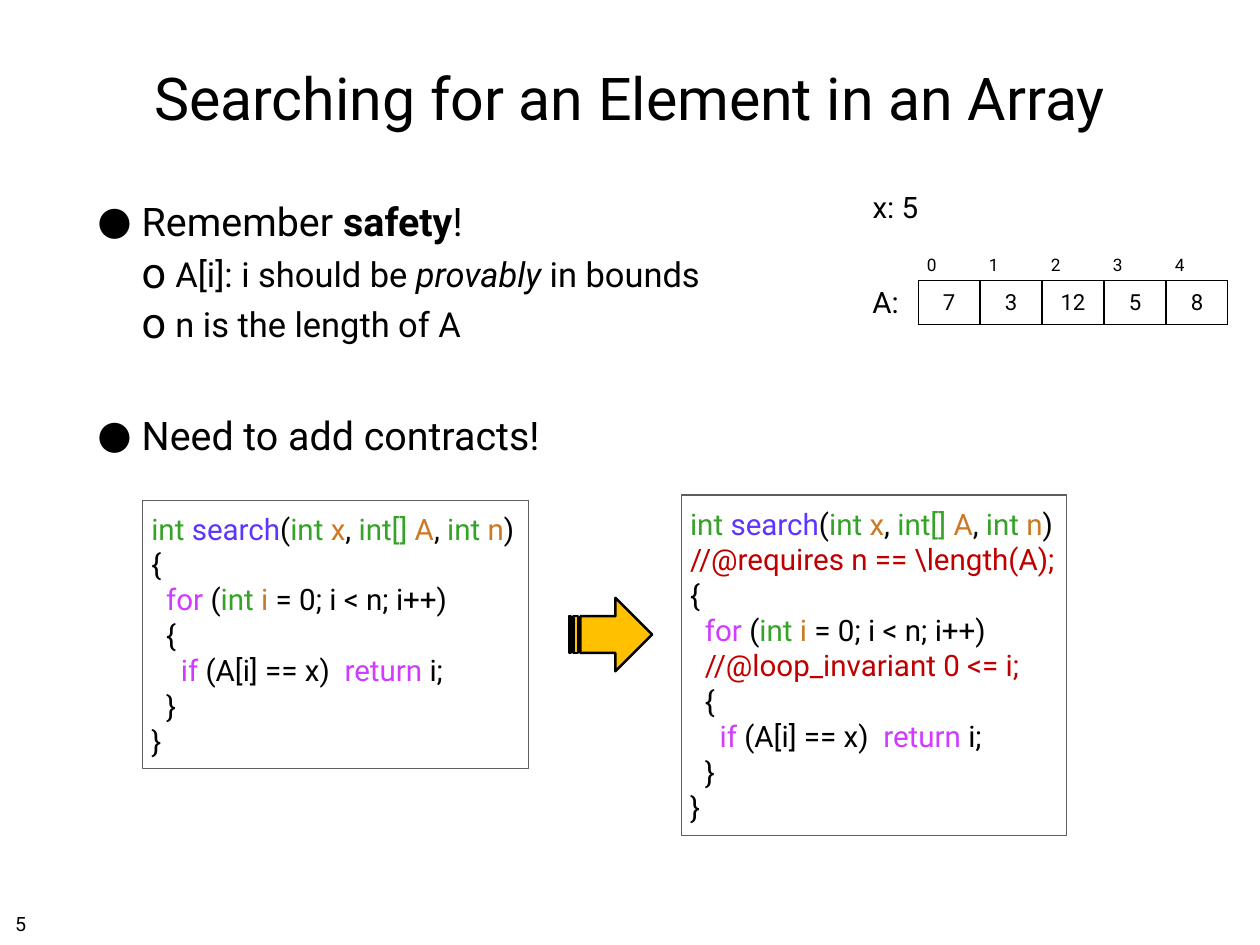
import lxml.etree
import pptx
import pptx.dml.color
import pptx.enum.shapes
import pptx.enum.text
import pptx.oxml.ns
import pptx.util

SLIDE_WIDTH = pptx.util.Inches(14.22)
SLIDE_HEIGHT = pptx.util.Inches(10.67)
FONT = "Roboto"
COLOURS = {
    "text": "000000",
    "type": "34A327",
    "function": "5E34FF",
    "variable": "CD7923",
    "keyword": "D03BFF",
    "contract": "C00000",
    "frame": "5E5E5E",
    "arrow": "FFC000",
}
ALIGN = pptx.enum.text.PP_ALIGN
ANCHOR = pptx.enum.text.MSO_ANCHOR
SHAPE = pptx.enum.shapes.MSO_SHAPE
INDENT = pptx.util.Pt(12)

ARRAY = [7, 3, 12, 5, 8]

# Each line of code is its depth of nesting and its (text, role) pieces.
SIGNATURE = (0, [
    ("int ", "type"), ("search", "function"), ("(", "text"),
    ("int ", "type"), ("x", "variable"), (", ", "text"),
    ("int[] ", "type"), ("A", "variable"), (", ", "text"),
    ("int ", "type"), ("n", "variable"), (")", "text"),
])
REQUIRES = (0, [("//@requires n == \\length(A);", "contract")])
LOOP = (1, [("for", "keyword"), (" (", "text"), ("int ", "type"),
            ("i", "variable"), (" = 0; i < n; i++)", "text")])
INVARIANT = (1, [("//@loop_invariant 0 <= i;", "contract")])
LOOP_BODY = [
    (1, [("{", "text")]),
    (2, [("if", "keyword"), (" (A[i] == x)  ", "text"),
         ("return ", "keyword"), ("i;", "text")]),
    (1, [("}", "text")]),
]
OPEN, CLOSE = (0, [("{", "text")]), (0, [("}", "text")])
PLAIN_CODE = [SIGNATURE, OPEN, LOOP, *LOOP_BODY, CLOSE]
SAFE_CODE = [SIGNATURE, REQUIRES, OPEN, LOOP, INVARIANT, *LOOP_BODY, CLOSE]


def area(left, top, width, height):
    """Turn percentages of the slide's size into lengths."""
    return [
        pptx.util.Emu(int(share * side / 100))
        for share, side in zip((left, top, width, height),
                               (SLIDE_WIDTH, SLIDE_HEIGHT) * 2)
    ]


def colour(role):
    return pptx.dml.color.RGBColor.from_string(COLOURS[role])


def xml_child(parent, tag, **attributes):
    child = lxml.etree.SubElement(parent, pptx.oxml.ns.qn(tag))
    for key, value in attributes.items():
        child.set(key, str(value))
    return child


def write(paragraph, text, size=24, role="text", bold=False, italic=False):
    run = paragraph.add_run()
    run.text = text
    font = run.font
    font.name, font.size = FONT, pptx.util.Pt(size)
    font.bold, font.italic = bold, italic
    font.color.rgb = colour(role)


def set_frame(frame, inset=0.06, anchor=ANCHOR.TOP, wrap=False):
    frame.auto_size = pptx.enum.text.MSO_AUTO_SIZE.NONE
    frame.word_wrap = wrap
    frame.vertical_anchor = anchor
    frame.margin_left = frame.margin_right = pptx.util.Inches(inset)
    frame.margin_top = frame.margin_bottom = pptx.util.Inches(inset)


def paragraphs(frame, count):
    """Return the frame's first paragraph and enough new ones after it."""
    return [frame.paragraphs[0]] + [frame.add_paragraph() for _ in range(count - 1)]


def place(placeholder, share):
    placeholder.left, placeholder.top, placeholder.width, placeholder.height = area(*share)


def add_bullet(paragraph, level, space):
    margin, hanging, percent, mark = [(0.5, 0.5, 100, "●"), (0.88, 0.38, 125, "o")][level]
    paragraph.level = level
    paragraph.alignment = ALIGN.LEFT
    paragraph.space_before = pptx.util.Pt(space)
    properties = paragraph._p.get_or_add_pPr()
    properties.set("marL", str(pptx.util.Inches(margin)))
    properties.set("indent", str(-pptx.util.Inches(hanging)))
    xml_child(xml_child(properties, "a:buClr"), "a:srgbClr", val=COLOURS["text"])
    xml_child(properties, "a:buSzPct", val=percent * 1000)
    xml_child(properties, "a:buFont", typeface=FONT)
    xml_child(properties, "a:buChar", char=mark)


def fill_title(title):
    place(title, (7.31, 2.62, 85.37, 15.37))
    set_frame(title.text_frame, anchor=ANCHOR.MIDDLE, wrap=True)
    paragraph = title.text_frame.paragraphs[0]
    paragraph.alignment = ALIGN.CENTER
    write(paragraph, "Searching for an Element in an Array", size=48)


def fill_body(body):
    plain, bold, italic = {}, {"bold": True}, {"italic": True}
    points = [
        (0, 8, [("Remember ", plain), ("safety", bold), ("!", plain)]),
        (1, 7, [("A[i]: i should be ", plain), ("provably", italic), (" in bounds", plain)]),
        (1, 7, [("n is the length of A", plain)]),
        (0, 54, [("Need to add contracts!", plain)]),
    ]
    place(body, (7.31, 20.34, 57.31, 74.98))
    set_frame(body.text_frame, wrap=True)
    for paragraph, (level, space, pieces) in zip(paragraphs(body.text_frame, len(points)), points):
        add_bullet(paragraph, level, space)
        for text, style in pieces:
            write(paragraph, text, size=(32, 28)[level], **style)


def add_label(slide, text, share, size=24, align=ALIGN.CENTER, anchor=ANCHOR.MIDDLE):
    frame = slide.shapes.add_textbox(*area(*share)).text_frame
    set_frame(frame, anchor=anchor)
    frame.paragraphs[0].alignment = align
    write(frame.paragraphs[0], text, size=size)


def add_borders(cell):
    properties = cell._tc.get_or_add_tcPr()
    for side in "LRTB":
        line = xml_child(properties, f"a:ln{side}", w=pptx.util.Pt(1))
        xml_child(xml_child(line, "a:solidFill"), "a:srgbClr", val=COLOURS["text"])


def add_array(slide, values, share):
    """Draw the values as a row of boxes with their indices above."""
    table = slide.shapes.add_table(2, len(values), *area(*share)).table
    table.first_row = table.horz_banding = False
    for column, value in enumerate(values):
        index_cell, value_cell = table.cell(0, column), table.cell(1, column)
        add_borders(value_cell)
        for cell, number, size, align, anchor in (
            (index_cell, column, 14, ALIGN.LEFT, ANCHOR.BOTTOM),
            (value_cell, value, 18, ALIGN.CENTER, ANCHOR.MIDDLE),
        ):
            cell.fill.background()
            cell.vertical_anchor = anchor
            paragraph = cell.text_frame.paragraphs[0]
            paragraph.alignment = align
            write(paragraph, str(number), size=size)


def add_outlined(slide, kind, share, line, weight):
    shape = slide.shapes.add_shape(kind, *area(*share))
    shape.shadow.inherit = False
    shape.fill.background()
    shape.line.color.rgb = colour(line)
    shape.line.width = pptx.util.Pt(weight)
    return shape


def add_code(slide, lines, share):
    frame = add_outlined(slide, SHAPE.RECTANGLE, share, "frame", 1).text_frame
    set_frame(frame, inset=0.1, anchor=ANCHOR.MIDDLE)
    for paragraph, (depth, pieces) in zip(paragraphs(frame, len(lines)), lines):
        paragraph.alignment = ALIGN.LEFT
        paragraph._p.get_or_add_pPr().set("marL", str(depth * INDENT))
        for text, role in pieces:
            write(paragraph, text, role=role)


def main():
    deck = pptx.Presentation()
    deck.slide_width, deck.slide_height = SLIDE_WIDTH, SLIDE_HEIGHT
    slide = deck.slides.add_slide(deck.slide_layouts[1])
    fill_title(slide.shapes.title)
    fill_body(slide.placeholders[1])
    add_label(slide, "x: 5", (68.78, 19.49, 4.57, 4.87))
    add_label(slide, "A:", (68.78, 29.52, 3.02, 4.87))
    add_array(slide, ARRAY, (72.86, 25.02, 24.61, 9.37))
    add_code(slide, PLAIN_CODE, (11.32, 52.95, 30.6, 28.4))
    arrow = add_outlined(slide, SHAPE.STRIPED_RIGHT_ARROW, (45.15, 63.26, 6.61, 7.78), "text", 2)
    arrow.fill.solid()
    arrow.fill.fore_color.rgb = colour("arrow")
    add_code(slide, SAFE_CODE, (54.08, 52.39, 30.6, 35.99))
    add_label(slide, "5", (0.77, 95.88, 2.6, 3.28), size=16, align=ALIGN.LEFT, anchor=ANCHOR.TOP)
    deck.save("out.pptx")


if __name__ == "__main__":
    main()
